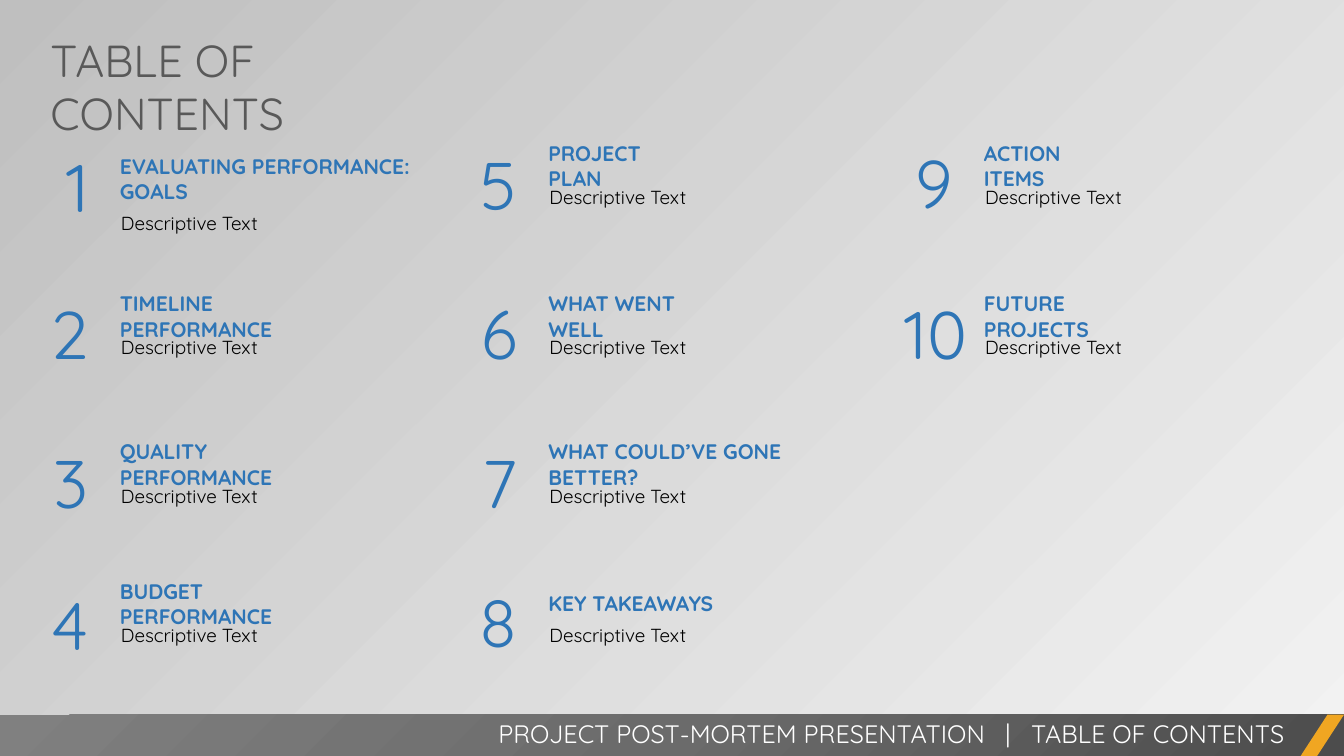
from lxml import etree
from pptx import Presentation
from pptx.dml.color import RGBColor
from pptx.enum.shapes import MSO_SHAPE
from pptx.enum.text import MSO_ANCHOR, PP_ALIGN
from pptx.oxml import parse_xml
from pptx.util import Inches, Pt

# Content: heading, heading width, heading height, number nudge
TITLE = "TABLE OF\vCONTENTS"
DESCRIPTION = "Descriptive Text"
FOOTER = "PROJECT POST-MORTEM PRESENTATION   |   TABLE OF CONTENTS"
COLUMNS = [
    [("EVALUATING PERFORMANCE:\nGOALS", 3.29, 0.61, 0.03),
     ("TIMELINE\vPERFORMANCE", 2.65, 0.35, 0),
     ("QUALITY\vPERFORMANCE", 2.62, 0.35, 0),
     ("BUDGET\vPERFORMANCE", 2.57, 0.35, 0.03)],
    [("PROJECT\vPLAN", 1.66, 0.35, 0.01),
     ("WHAT WENT\vWELL", 1.92, 0.35, 0),
     ("WHAT COULD’VE GONE\vBETTER?", 3.36, 0.35, 0),
     ("KEY TAKEAWAYS", 1.85, 0.35, 0)],
    [("ACTION\vITEMS", 1.62, 0.35, -0.01),
     ("FUTURE\vPROJECTS", 1.94, 0.35, 0)],
]

# Grid, in inches
WIDTH, HEIGHT = 13.33, 7.5
MARGIN = 0.4
COLUMN_LEFTS = [MARGIN, 4.65, 8.97]
ROW_TOPS = [1.47, 2.96, 4.43, 5.81]
HEADING_OFFSET = 0.69
NUMBER_RISE = 0.3
BAR_TOP = 7.09
BAR_HEIGHT = HEIGHT - BAR_TOP
ACCENT_WIDTH = 0.43

FONT = "Quicksand"
BLUE = RGBColor(0x2E, 0x75, 0xB6)
BLACK = RGBColor(0, 0, 0)
GRAY = RGBColor(0x59, 0x59, 0x59)
WHITE = RGBColor(0xFF, 0xFF, 0xFF)
ORANGE = RGBColor(0xF0, 0xA6, 0x22)
LIGHT = RGBColor(0xF2, 0xF2, 0xF2)
SILVER = RGBColor(0xBF, 0xBF, 0xBF)
BAR_STOPS = [(0, RGBColor(0x4C, 0x4C, 0x4C)), (50, RGBColor(0x6B, 0x6B, 0x6B)),
             (100, RGBColor(0x80, 0x80, 0x80))]


def write_text(slide, text, box, *, size, color, bold=False, align=PP_ALIGN.LEFT,
               anchor=MSO_ANCHOR.TOP, insets=(0.1, 0.05, 0.1, 0.05), wrap=True,
               line_spacing=None, space_before=0, shape=None):
    """Put formatted text in the given shape, or in a new text box."""
    place = [Inches(length) for length in box]
    if shape is None:
        shape = slide.shapes.add_textbox(*place)
    shape.left, shape.top, shape.width, shape.height = place
    frame = shape.text_frame
    frame.text = text
    frame.word_wrap = wrap
    frame.vertical_anchor = anchor
    (frame.margin_left, frame.margin_top,
     frame.margin_right, frame.margin_bottom) = [Inches(inset) for inset in insets]
    for paragraph in frame.paragraphs:
        paragraph.alignment = align
        paragraph.space_before = Pt(space_before)
        if line_spacing:
            paragraph.line_spacing = Pt(line_spacing)
        for run in paragraph.runs:
            run.font.name = FONT
            run.font.size = Pt(size)
            run.font.bold = bold
            run.font.color.rgb = color


def add_plain_shape(slide, kind, box):
    shape = slide.shapes.add_shape(kind, *[Inches(length) for length in box])
    shape.shadow.inherit = False
    shape.line.fill.background()
    return shape


def fill_radial(shape, stops):
    """Fill with a circular gradient centred on the bottom right corner."""
    stop_xml = "".join(f'<a:gs pos="{position * 1000}"><a:srgbClr val="{color}"/></a:gs>'
                       for position, color in stops)
    gradient = parse_xml(
        '<a:gradFill xmlns:a="http://schemas.openxmlformats.org/drawingml/2006/main">'
        f'<a:gsLst>{stop_xml}</a:gsLst><a:path path="circle">'
        '<a:fillToRect l="100000" t="100000"/></a:path></a:gradFill>')
    shape.fill.solid()
    for solid in shape.element.spPr.findall(
            "{http://schemas.openxmlformats.org/drawingml/2006/main}solidFill"):
        solid.getparent().replace(solid, gradient)


def add_entry(slide, number, left, top, entry):
    heading, width, height, nudge = entry
    # Two digits need a wider box
    number_left, number_width = (left, 0.58) if number < 10 else (left - 0.23, 0.95)
    text_left = left + HEADING_OFFSET
    write_text(slide, str(number), (number_left, top - NUMBER_RISE + nudge, number_width, 1.11),
               size=48, color=BLUE, align=PP_ALIGN.RIGHT, wrap=False,
               insets=(0.1, 0.35, 0.1, 0.05), line_spacing=50)
    write_text(slide, heading, (text_left, top, width, height), size=15, color=BLUE,
               bold=True, anchor=MSO_ANCHOR.MIDDLE)
    write_text(slide, DESCRIPTION, (text_left - 0.01, top + height - 0.11, 3.37, 0.39),
               size=13.5, color=BLACK, insets=(0.12, 0.06, 0.12, 0.06),
               line_spacing=21.5, space_before=2.7)


def main():
    presentation = Presentation()
    presentation.slide_width = Inches(WIDTH)
    presentation.slide_height = Inches(HEIGHT)
    slide = presentation.slides.add_slide(presentation.slide_layouts[5])

    # Background
    background = slide.background.fill
    background.gradient()
    background.gradient_angle = 135
    for stop, color in zip(background.gradient_stops, (LIGHT, SILVER)):
        stop.color.rgb = color

    # Title
    write_text(slide, TITLE, (MARGIN, 0.27, 4.55, 0.64), size=32, color=GRAY,
               shape=slide.shapes.title)

    # Numbered entries, column by column
    number = 1
    for left, entries in zip(COLUMN_LEFTS, COLUMNS):
        for top, entry in zip(ROW_TOPS, entries):
            add_entry(slide, number, left, top, entry)
            number += 1

    # Footer bar
    bar = add_plain_shape(slide, MSO_SHAPE.RECTANGLE, (0, BAR_TOP, WIDTH, BAR_HEIGHT))
    fill_radial(bar, BAR_STOPS)
    accent = add_plain_shape(slide, MSO_SHAPE.PARALLELOGRAM,
                             (WIDTH - ACCENT_WIDTH, BAR_TOP, ACCENT_WIDTH, BAR_HEIGHT))
    accent.adjustments[0] = 0.65
    accent.fill.solid()
    accent.fill.fore_color.rgb = ORANGE
    write_text(slide, FOOTER, (MARGIN, 7.08, 12.44, 0.4), size=18, color=WHITE,
               align=PP_ALIGN.RIGHT)

    presentation.save("out.pptx")


if __name__ == "__main__":
    main()
